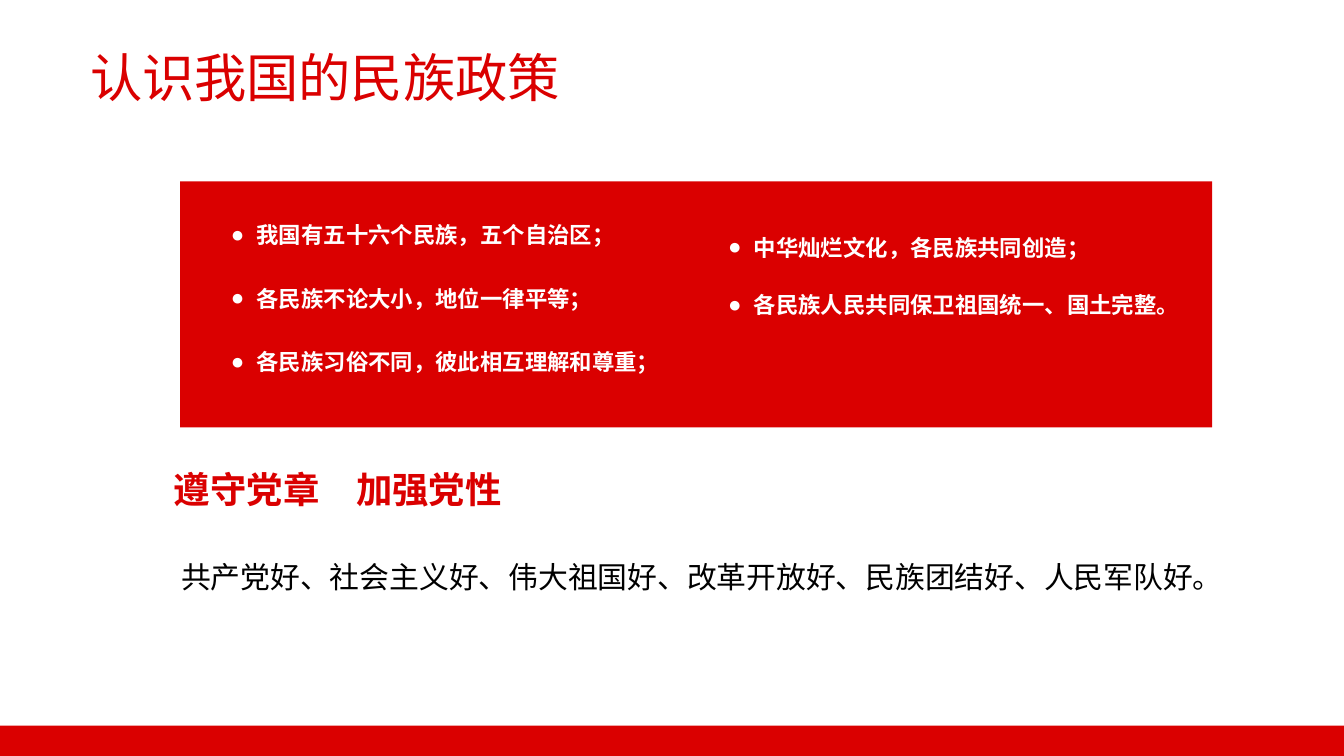
from lxml import etree
from pptx import Presentation
from pptx.dml.color import RGBColor
from pptx.enum.shapes import MSO_SHAPE
from pptx.enum.text import MSO_AUTO_SIZE, PP_ALIGN
from pptx.oxml.ns import qn
from pptx.util import Inches, Pt

RED, WHITE, BLACK = "DA0000", "FFFFFF", "000000"
LATIN, CJK_SC, CJK_JP = "Arial Narrow", "Noto Sans CJK SC", "Noto Sans CJK JP"
SLIDE_WIDTH = 10
SLIDE_HEIGHT = SLIDE_WIDTH * 9 / 16
BULLET_INDENT = 0.19

LEFT_POINTS = [
    "我国有五十六个民族，五个自治区；",
    "各民族不论大小，地位一律平等；",
    "各民族习俗不同，彼此相互理解和尊重；",
]
RIGHT_POINTS = [
    "中华灿烂文化，各民族共同创造；",
    "各民族人民共同保卫祖国统一、国土完整。",
]


def paint(color_format, color):
    color_format.rgb = RGBColor.from_string(color)


def fill_solid(shape, color):
    shape.fill.solid()
    paint(shape.fill.fore_color, color)


def add_bar(shapes, left, top, width, height, color):
    bar = shapes.add_shape(
        MSO_SHAPE.RECTANGLE, *map(Inches, (left, top, width, height)))
    bar.shadow.inherit = False
    fill_solid(bar, color)
    bar.line.fill.background()


def add_bullet(paragraph):
    properties = paragraph._p.get_or_add_pPr()
    properties.set("marL", str(Inches(BULLET_INDENT)))
    properties.set("indent", str(-Inches(BULLET_INDENT)))
    etree.SubElement(properties, qn("a:buFont"), typeface="Arial")
    etree.SubElement(properties, qn("a:buChar"), char="●")


def add_text(shapes, place, words, size, color, latin=LATIN, east_asian=CJK_SC,
             bold=False, bullet=False, frame_format=None, paragraph_format=None):
    box = shapes.add_textbox(*map(Inches, place))
    frame = box.text_frame
    frame.word_wrap = True
    frame.auto_size = MSO_AUTO_SIZE.SHAPE_TO_FIT_TEXT
    for key, value in (frame_format or {}).items():
        setattr(frame, key, value)

    paragraph = frame.paragraphs[0]
    if bullet:
        add_bullet(paragraph)
    for key, value in (paragraph_format or {}).items():
        setattr(paragraph, key, value)

    run = paragraph.add_run()
    run.text = words
    for key, value in {"size": Pt(size), "bold": bold, "name": latin}.items():
        setattr(run.font, key, value)
    paint(run.font.color, color)
    etree.SubElement(run._r.get_or_add_rPr(), qn("a:ea"), typeface=east_asian)
    return box


def add_points(shapes, points, left, top, pitch, background=None):
    """Stack bulleted lines at an even pitch."""
    for row, words in enumerate(points):
        point = add_text(shapes, (left, top + row * pitch, 3.78, 0.3), words, 12,
                         WHITE, bold=True, bullet=True)
        if background:
            fill_solid(point, background)


def main():
    prs = Presentation()
    prs.slide_width, prs.slide_height = Inches(SLIDE_WIDTH), Inches(SLIDE_HEIGHT)
    shapes = prs.slides.add_slide(prs.slide_layouts[6]).shapes

    no_margins = dict.fromkeys(
        ("margin_left", "margin_top", "margin_right", "margin_bottom"), 0)
    add_text(shapes, (0.67, 0.34, 3.53, 0.47), "认识我国的民族政策", 28, RED,
             latin=CJK_JP, east_asian=CJK_JP,
             frame_format={**no_margins, "word_wrap": False})
    add_bar(shapes, 0, 5.4, SLIDE_WIDTH, SLIDE_HEIGHT - 5.4, RED)

    add_text(shapes, (1.03, 3.43, 2.97, 0.43), "遵守党章　加强党性", 19.5, RED,
             bold=True, paragraph_format={"alignment": PP_ALIGN.CENTER})
    add_text(shapes, (1.25, 3.84, 8.08, 0.64),
             "共产党好、社会主义好、伟大祖国好、改革开放好、民族团结好、人民军队好。",
             16, BLACK, latin=CJK_SC, paragraph_format={"line_spacing": 2.0})

    panel = shapes.add_group_shape().shapes
    add_bar(panel, 1.34, 1.35, 7.68, 1.83, RED)
    add_points(panel, LEFT_POINTS, 1.62, 1.6, 0.47, background=RED)
    add_points(panel, RIGHT_POINTS, 5.32, 1.69, 0.43)

    prs.save("out.pptx")


if __name__ == "__main__":
    main()
